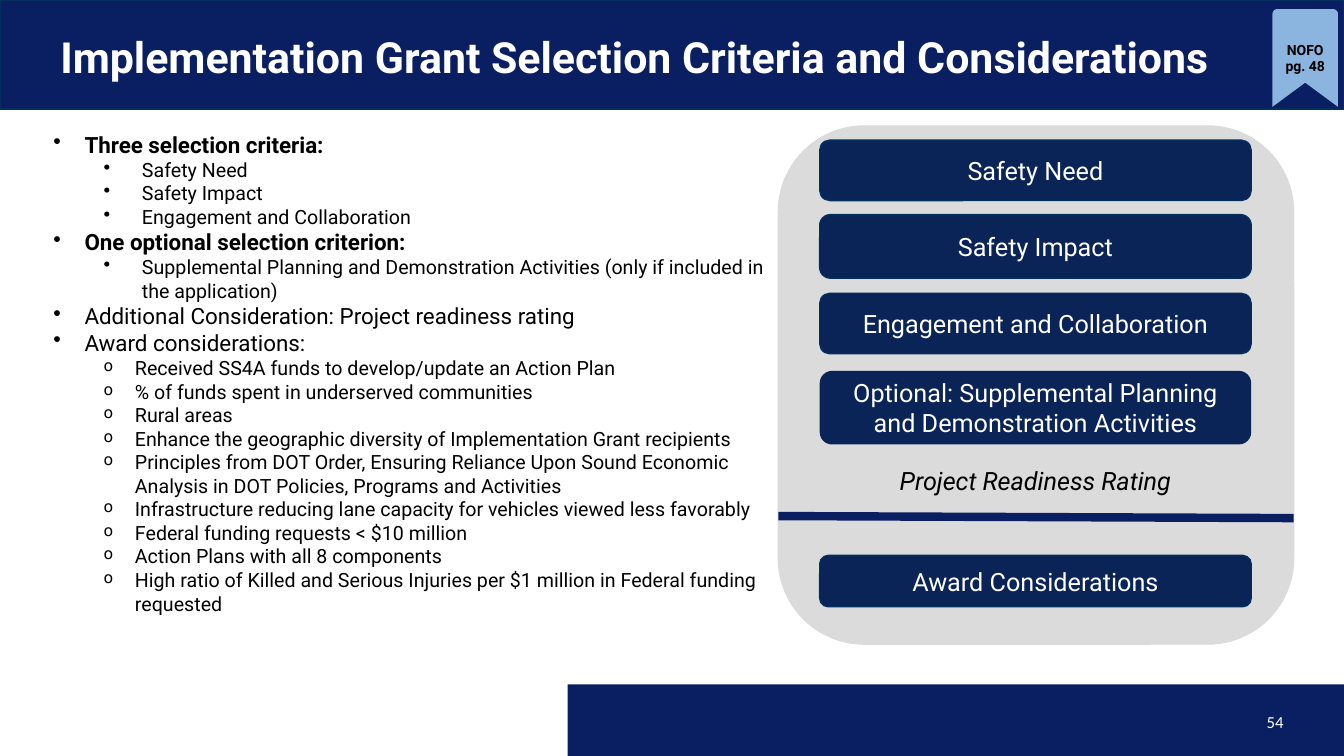
import math

import lxml.etree
import pptx
import pptx.dml.color
import pptx.enum.shapes
import pptx.enum.text
import pptx.oxml.ns
import pptx.util

PX = 9144
SHAPES = pptx.enum.shapes.MSO_SHAPE
ALIGN = pptx.enum.text.PP_ALIGN
ANCHOR = pptx.enum.text.MSO_ANCHOR
qn = pptx.oxml.ns.qn


def color(value):
    return pptx.dml.color.RGBColor.from_string(value)


class Deck:
    font = "Roboto"
    navy = "0A1F61"
    box_fill = "0A2458"
    box_line = "042E5D"
    panel_gray = "DBDBDB"
    ribbon_blue = "8BB4DF"
    white = "FFFFFF"
    black = "000000"

    def __init__(self, width, height):
        self.presentation = pptx.Presentation()
        self.presentation.slide_width = width * PX
        self.presentation.slide_height = height * PX
        self.slide = self.presentation.slides.add_slide(self.presentation.slide_layouts[6])

    def paint(self, shape, fill, line=None):
        shape.shadow.inherit = False
        shape.fill.solid()
        shape.fill.fore_color.rgb = color(fill)
        if line:
            shape.line.color.rgb = color(line)
            shape.line.width = pptx.util.Pt(1)
        else:
            shape.line.fill.background()

    def style(self, paragraph, size, ink, font=None, bold=False, italic=False):
        for run in paragraph.runs:
            run.font.name = font or self.font
            run.font.size = pptx.util.Pt(size)
            run.font.color.rgb = color(ink)
            run.font.bold = bold
            run.font.italic = italic

    def label(self, shape, words, size, ink, align=ALIGN.CENTER, spacing=None, **look):
        frame = shape.text_frame
        frame.word_wrap = True
        frame.vertical_anchor = ANCHOR.MIDDLE
        frame.text = words
        paragraph = frame.paragraphs[0]
        paragraph.alignment = align
        if spacing:
            paragraph.line_spacing = spacing
        self.style(paragraph, size, ink, **look)

    def block(self, kind, left, top, width, height, fill, line=None):
        shape = self.slide.shapes.add_shape(kind, left * PX, top * PX, width * PX, height * PX)
        self.paint(shape, fill, line)
        return shape

    def text(self, left, top, width, height, words, size, ink, **look):
        shape = self.slide.shapes.add_textbox(left * PX, top * PX, width * PX, height * PX)
        self.label(shape, words, size, ink, **look)

    def criterion(self, top, height, words, line=None):
        shape = self.block(SHAPES.ROUNDED_RECTANGLE, 813, top, 428, height, self.box_fill, line)
        self.label(shape, words, 18, self.white)

    def bullets(self, left, top, width, height, items):
        shape = self.slide.shapes.add_textbox(left * PX, top * PX, width * PX, height * PX)
        frame = shape.text_frame
        frame.word_wrap = True
        frame.text = "\n".join(words for words, _ in items)
        for paragraph, (_, kind) in zip(frame.paragraphs, items):
            level, margin, hang, mark, scale, size, bold = kind
            paragraph.level = level
            properties = paragraph._p.get_or_add_pPr()
            properties.set("marL", str(margin * PX))
            properties.set("indent", str(-hang * PX))
            lxml.etree.SubElement(properties, qn("a:buSzPct")).set("val", str(scale * 1000))
            lxml.etree.SubElement(properties, qn("a:buChar")).set("char", mark)
            self.style(paragraph, size, self.black, bold=bold)

    def line(self, start, end, ink, weight):
        connector = self.slide.shapes.add_connector(
            pptx.enum.shapes.MSO_CONNECTOR.STRAIGHT, *(value * PX for value in start + end))
        connector.line.color.rgb = color(ink)
        connector.line.width = pptx.util.Pt(weight)
        lxml.etree.SubElement(connector._element.spPr, qn("a:effectLst"))

    def ribbon(self, left, top, right, bottom, notch, radius, words):
        def corner(x, y, first):
            angles = (math.radians(first + step * 15) for step in range(7))
            return [(x + radius * math.cos(a), y - radius * math.sin(a)) for a in angles]

        outline = corner(right - radius, top + radius, 0)
        outline += corner(left + radius, top + radius, 90)
        outline += [(left, bottom), ((left + right) / 2, notch)]
        points = [(round(x * PX), round(y * PX)) for x, y in outline]
        builder = self.slide.shapes.build_freeform(right * PX, bottom * PX)
        builder.add_line_segments(points, close=True)
        shape = builder.convert_to_shape()
        self.paint(shape, self.ribbon_blue)
        self.label(shape, words, 10, self.black, bold=True)


HEADING = (0, 31, 31, "•", 100, 16, True)
TOPIC = (0, 31, 31, "•", 100, 16, False)
CRITERION = (1, 88, 38, "•", 100, 14, False)
CONSIDERATION = (1, 81, 31, "o", 80, 14, False)

OUTLINE = [
    ("Three selection criteria:", HEADING),
    ("Safety Need", CRITERION),
    ("Safety Impact", CRITERION),
    ("Engagement and Collaboration", CRITERION),
    ("One optional selection criterion:", HEADING),
    ("Supplemental Planning and Demonstration Activities (only if included in the application)", CRITERION),
    ("Additional Consideration: Project readiness rating", TOPIC),
    ("Award considerations:", TOPIC),
    ("Received SS4A funds to develop/update an Action Plan", CONSIDERATION),
    ("% of funds spent in underserved communities", CONSIDERATION),
    ("Rural areas", CONSIDERATION),
    ("Enhance the geographic diversity of Implementation Grant recipients", CONSIDERATION),
    ("Principles from DOT Order, Ensuring Reliance Upon Sound Economic Analysis in DOT Policies, "
     "Programs and Activities", CONSIDERATION),
    ("Infrastructure reducing lane capacity for vehicles viewed less favorably", CONSIDERATION),
    ("Federal funding requests < $10 million", CONSIDERATION),
    ("Action Plans with all 8 components", CONSIDERATION),
    ("High ratio of Killed and Serious Injuries per $1 million in Federal funding requested", CONSIDERATION),
]


def main():
    deck = Deck(1333, 750)
    deck.block(SHAPES.RECTANGLE, 0, 0, 1333, 108, deck.navy, deck.box_line)
    deck.block(SHAPES.RECTANGLE, 563, 679, 770, 71, deck.navy)
    deck.text(983, 704, 300, 25, "54", 12, deck.white, align=ALIGN.RIGHT, font="Calibri")
    deck.text(50, 0, 1233, 108, "Implementation Grant Selection Criteria and Considerations",
              30.6, deck.white, align=ALIGN.LEFT, spacing=1.08, bold=True)
    deck.bullets(43, 125, 729, 535, OUTLINE)

    deck.block(SHAPES.ROUNDED_RECTANGLE, 772, 125, 511, 514, deck.panel_gray, deck.panel_gray)
    for top, height, words in [
        (139, 60, "Safety Need"),
        (213, 63, "Safety Impact"),
        (291, 60, "Engagement and Collaboration"),
        (551, 51, "Award Considerations"),
    ]:
        deck.criterion(top, height, words, deck.box_line)
    deck.criterion(368, 73, "Optional: Supplemental Planning and Demonstration Activities")
    deck.text(813, 458, 428, 38, "Project Readiness Rating", 18, deck.black, italic=True)
    deck.line((772, 512), (1283, 514), deck.navy, 6)
    deck.ribbon(1262, 9, 1327, 106, 82, 5, "NOFO pg. 48")
    deck.presentation.save("out.pptx")


if __name__ == "__main__":
    main()
